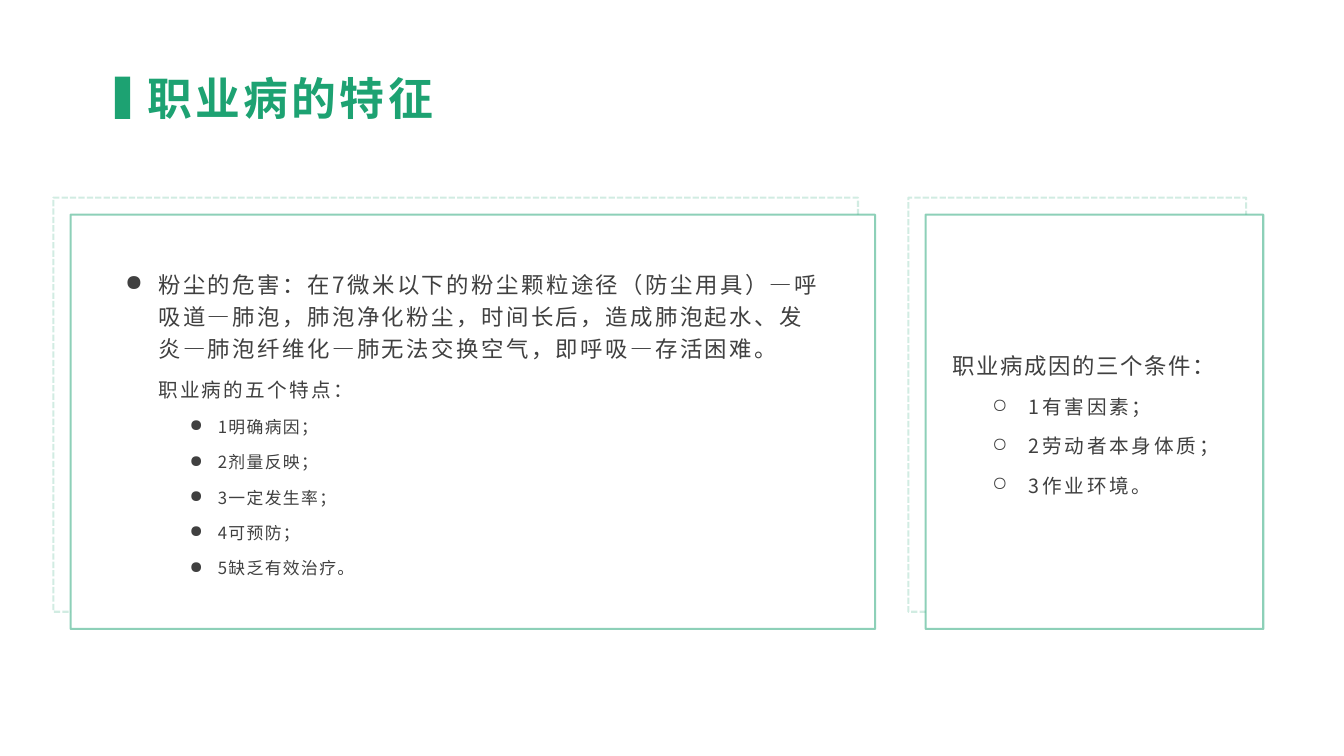
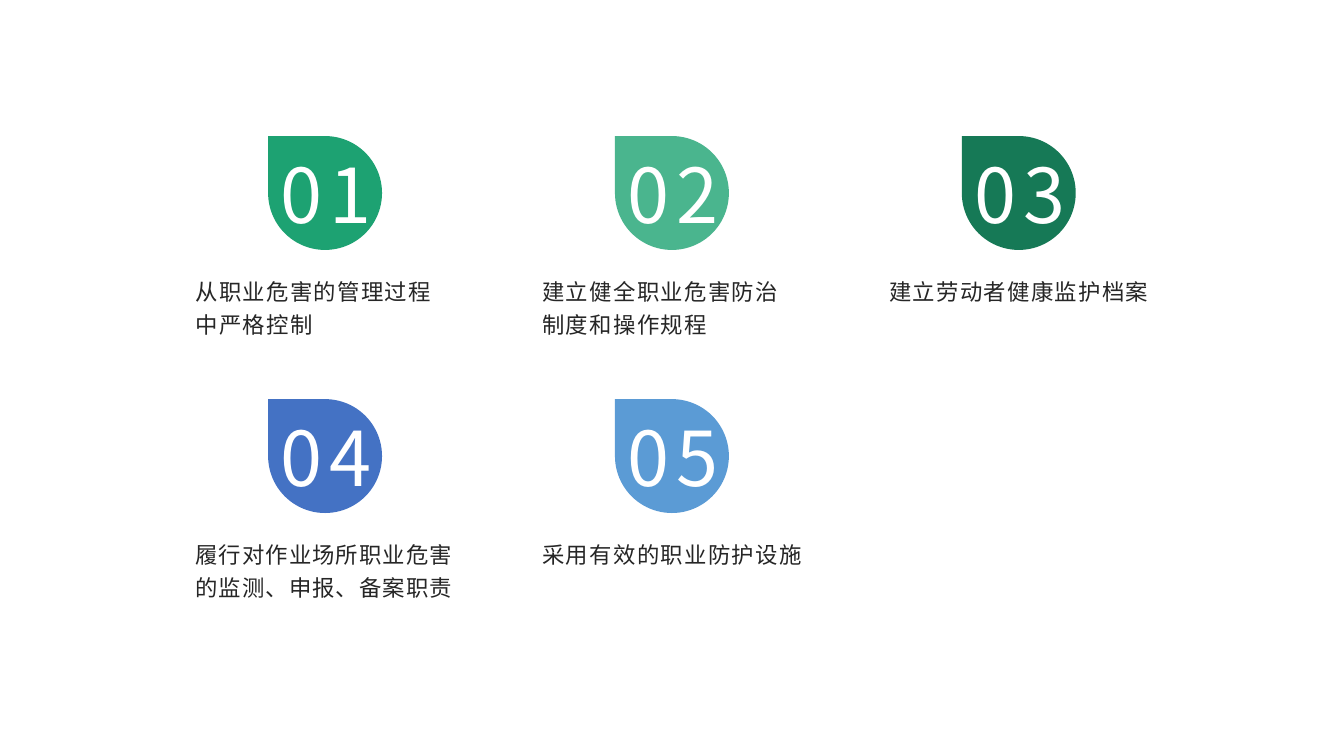
from lxml import etree
from pptx import Presentation
from pptx import util as u
from pptx.dml.color import RGBColor
from pptx.enum import dml, lang, shapes, text
from pptx.oxml.ns import qn

FONT = "Noto Sans CJK SC"
GREEN = RGBColor(0x1D, 0xA2, 0x72)
MINT = RGBColor(0x4A, 0xB5, 0x8E)
FOREST = RGBColor(0x16, 0x79, 0x56)
BLUE = RGBColor(0x44, 0x72, 0xC4)
SKY = RGBColor(0x5B, 0x9B, 0xD5)
WHITE = RGBColor(0xFF, 0xFF, 0xFF)
GREY = RGBColor(0x40, 0x40, 0x40)
INK = RGBColor(0x26, 0x26, 0x26)

SLIDE_W, SLIDE_H = 13.33, 7.5
TITLE_ONLY, BLANK = 5, 6
PANEL_TOP, PANEL_H, PANEL_SHIFT = 2.13, 4.11, 0.17
PANEL_PAD = 0.25
GRID_LEFT, GRID_TOP = 1.84, 1.35
COL_W, ROW_H, COLS = 3.44, 2.61, 3
DROP = 1.13
CAPTION_W, CAPTION_H, CAPTION_DROP = 2.78, 0.88, 1.31

HARM = ("粉尘的危害：在7微米以下的粉尘颗粒途径（防尘用具）—呼吸道—肺泡，"
        "肺泡净化粉尘，时间长后，造成肺泡起水、发炎—肺泡纤维化—肺无法交换空气，"
        "即呼吸—存活困难。")
FEATURES = ["1明确病因；", "2剂量反映；", "3一定发生率；", "4可预防；", "5缺乏有效治疗。"]
CAUSES = ["1有害因素；", "2劳动者本身体质；", "3作业环境。"]
MEASURES = [
    ("从职业危害的管理过程中严格控制", GREEN, 1),
    ("建立健全职业危害防治制度和操作规程", MINT, 1),
    ("建立劳动者健康监护档案", FOREST, 1),
    ("履行对作业场所职业危害的监测、申报、备案职责", BLUE, 0.8),
    ("采用有效的职业防护设施", SKY, 1),
]


def box(*lengths):
    return [u.Inches(length) for length in lengths]


def add_run(p, words, size, color, spacing, bold=False):
    r = p.add_run()
    r.text = words
    font = r.font
    font.size, font.bold = u.Pt(size), bold
    font.color.rgb = color
    font.name = FONT
    font.language_id = lang.MSO_LANGUAGE_ID.SIMPLIFIED_CHINESE
    rPr = r._r.get_or_add_rPr()
    rPr.set("spc", str(round(spacing * 100)))
    etree.SubElement(rPr, qn("a:ea")).set("typeface", FONT)


def set_frame(tf, inset_x, inset_y, anchor):
    tf.word_wrap = True
    tf.auto_size = text.MSO_AUTO_SIZE.NONE
    tf.vertical_anchor = anchor
    tf.margin_left = tf.margin_right = u.Inches(inset_x)
    tf.margin_top = tf.margin_bottom = u.Inches(inset_y)


def add_textbox(s, at, inset_x=0.07, inset_y=0.03, anchor=text.MSO_ANCHOR.MIDDLE):
    tf = s.shapes.add_textbox(*box(*at)).text_frame
    set_frame(tf, inset_x, inset_y, anchor)
    return tf


def format_paragraph(p, level=0, left=0, hang=0, bullet=None, line_spacing=1.2):
    p.level = level
    p.line_spacing = line_spacing
    p.space_after = u.Pt(8)
    pPr = p._p.get_or_add_pPr()
    pPr.set("marL", str(u.Inches(left)))
    pPr.set("indent", str(-u.Inches(hang)))
    if bullet:
        etree.SubElement(pPr, qn("a:buChar")).set("char", bullet)


def add_shape(s, kind, at, fill=None):
    sp = s.shapes.add_shape(kind, *box(*at))
    sp.shadow.inherit = False
    if fill is None:
        sp.fill.background()
    else:
        sp.fill.solid()
        sp.fill.fore_color.rgb = fill
    sp.line.fill.background()
    return sp


def add_outline(s, at, opacity, dash, fill=None):
    sp = add_shape(s, shapes.MSO_SHAPE.RECTANGLE, at, fill)
    sp.line.color.rgb = GREEN
    sp.line.width = u.Pt(1.5)
    sp.line.dash_style = dash
    color = sp.line._ln.find(".//" + qn("a:srgbClr"))
    etree.SubElement(color, qn("a:alpha")).set("val", str(opacity * 1000))


def add_title(s, words):
    add_shape(s, shapes.MSO_SHAPE.RECTANGLE, (1.14, 0.76, 0.15, 0.42), GREEN)
    sp = s.shapes.title
    sp.left, sp.top, sp.width, sp.height = box(1.39, 0.67, SLIDE_W - 2 * 1.39, 0.88)
    set_frame(sp.text_frame, 0.07, 0.03, text.MSO_ANCHOR.TOP)
    p = sp.text_frame.paragraphs[0]
    p.alignment = text.PP_ALIGN.LEFT
    add_run(p, words, 32, GREEN, 2.4, bold=True)


def add_panel(s, left, width, text_left, text_width, items):
    back = (left - PANEL_SHIFT, PANEL_TOP - PANEL_SHIFT, width, PANEL_H)
    add_outline(s, back, 20, dml.MSO_LINE.SQUARE_DOT)
    front = (left, PANEL_TOP, width, PANEL_H)
    add_outline(s, front, 50, dml.MSO_LINE.SOLID, WHITE)
    tf = add_textbox(s, (text_left, PANEL_TOP + PANEL_PAD,
                         text_width, PANEL_H - 2 * PANEL_PAD))
    for i, (words, size, spacing, layout) in enumerate(items):
        p = tf.add_paragraph() if i else tf.paragraphs[0]
        format_paragraph(p, **layout)
        add_run(p, words, size, GREY, spacing)


def add_measure(s, index, words, color, spacing):
    row, col = divmod(index, COLS)
    left, top = GRID_LEFT + col * COL_W, GRID_TOP + row * ROW_H
    drop = (left + 0.82, top, DROP, DROP)
    sp = add_shape(s, shapes.MSO_SHAPE.TEAR, drop, color)
    sp._element.spPr.find(qn("a:xfrm")).set("flipH", "1")
    caption = add_textbox(s, (left, top + CAPTION_DROP, CAPTION_W, CAPTION_H),
                          0.1, 0.05, text.MSO_ANCHOR.TOP)
    format_paragraph(caption.paragraphs[0])
    add_run(caption.paragraphs[0], words, 16, INK, spacing)
    number = add_textbox(s, (left + 0.83, top + 0.1, DROP, 0.94), 0, 0)
    p = number.paragraphs[0]
    format_paragraph(p, line_spacing=1.0)
    p.alignment = text.PP_ALIGN.CENTER
    add_run(p, f"{index + 1:02d}", 54, WHITE, 4.8)


def build_features(prs):
    s = prs.slides.add_slide(prs.slide_layouts[TITLE_ONLY])
    add_title(s, "职业病的特征")
    feature = dict(level=2, left=0.92, hang=0.28, bullet="●")
    cause = dict(level=1, left=0.75, hang=0.36, bullet="○")
    harm_items = [
        (HARM, 16, 1.8, dict(left=0.33, hang=0.33, bullet="●")),
        ("职业病的五个特点：", 14, 1.6, dict(level=1, left=0.33)),
    ] + [(words, 12, 1, feature) for words in FEATURES]
    cause_items = [("职业病成因的三个条件：", 16, 1.2, {})]
    cause_items += [(words, 14, 2, cause) for words in CAUSES]
    add_panel(s, 0.7, 7.98, 1.17, 7.04, harm_items)
    add_panel(s, 9.18, 3.35, 9.38, 2.96, cause_items)


def build_measures(prs):
    s = prs.slides.add_slide(prs.slide_layouts[BLANK])
    for index, measure in enumerate(MEASURES):
        add_measure(s, index, *measure)


def main():
    prs = Presentation()
    prs.slide_width, prs.slide_height = box(SLIDE_W, SLIDE_H)
    build_features(prs)
    build_measures(prs)
    prs.save("out.pptx")


if __name__ == "__main__":
    main()
